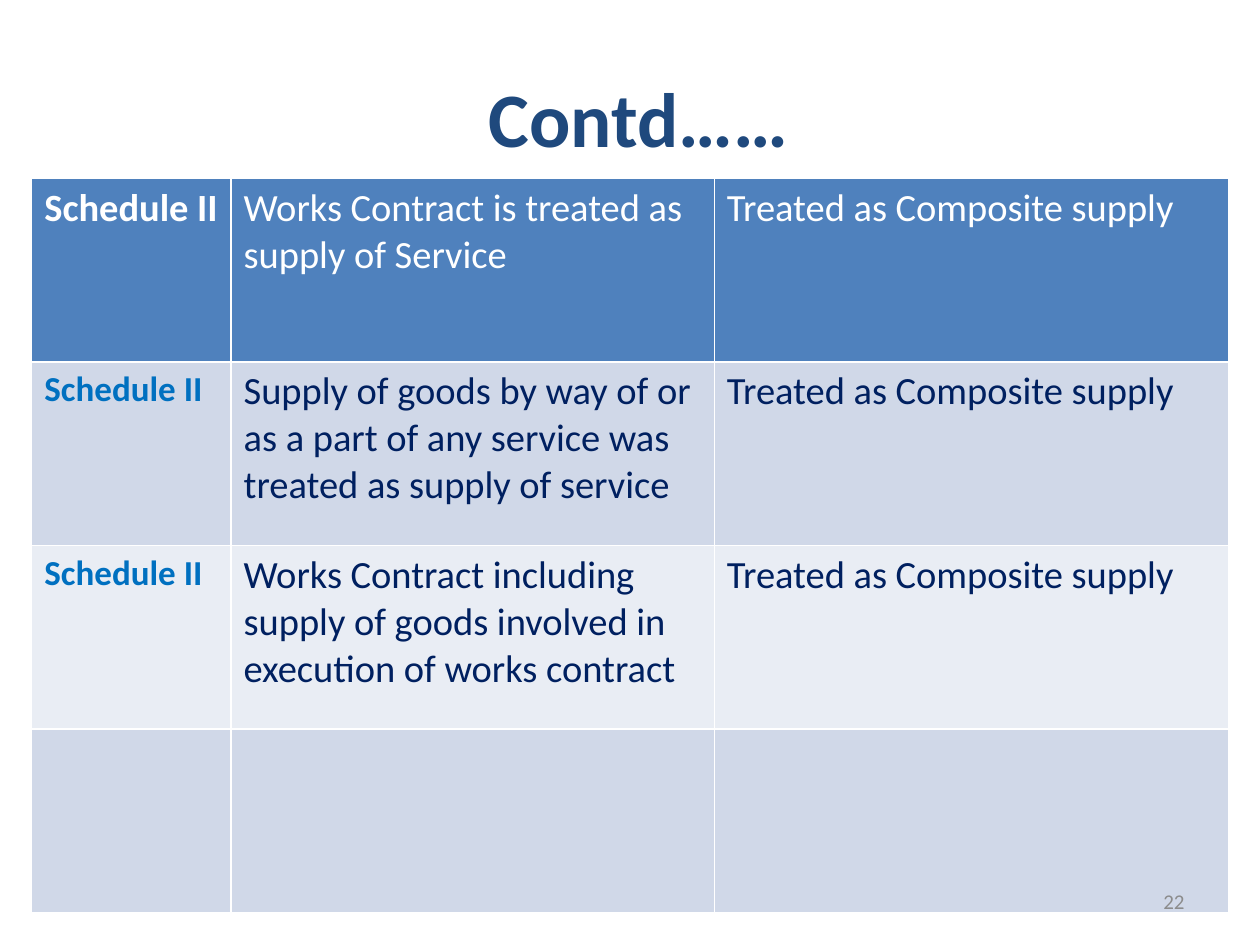
"""Build the schedule comparison slide with its title, table and page number."""
import pptx
import pptx.util
import pptx.dml.color
import pptx.enum.text

Cm, Pt = pptx.util.Cm, pptx.util.Pt
ALIGN = pptx.enum.text.PP_ALIGN
MIDDLE = pptx.enum.text.MSO_ANCHOR.MIDDLE

TITLE = " Contd……"
PAGE_NUMBER = "22"
SCHEDULE_ROWS = [
    ("Schedule II", "Works Contract is treated as supply of Service",
     "Treated as Composite supply"),
    ("Schedule II", "Supply of goods by way of or as a part of any service was "
     "treated as supply of service", "Treated as Composite supply"),
    ("Schedule II", "Works Contract including supply of goods involved in "
     "execution of works contract", "Treated as Composite supply"),
    ("", "", ""),
]
COLUMN_WIDTHS = [4.02, 9.74, 10.37]
ROW_HEIGHT = 3.7
COLORS = {
    "title": "1F497D", "header": "4F81BD", "header_text": "FFFFFF",
    "band_dark": "D0D8E8", "band_light": "E9EDF4",
    "schedule": "0070C0", "body": "002060", "number": "8C8C8C",
}


def rgb(key):
    return pptx.dml.color.RGBColor.from_string(COLORS[key])


def write(frame, text, size, color, bold=False, align=None):
    frame.text = text
    paragraph = frame.paragraphs[0]
    paragraph.alignment = align
    for run in paragraph.runs:
        run.font.name = "Calibri"
        run.font.size = Pt(size)
        run.font.bold = bold
        run.font.color.rgb = rgb(color)


def cell_style(row, column):
    if row == 0:
        return "header", "header_text", 22
    band = "band_dark" if row % 2 else "band_light"
    return (band, "schedule", 20) if column == 0 else (band, "body", 22)


def add_schedule_table(slide):
    schedule = slide.shapes.add_table(
        len(SCHEDULE_ROWS), len(COLUMN_WIDTHS), Cm(0.64), Cm(3.6),
        Cm(sum(COLUMN_WIDTHS)), Cm(ROW_HEIGHT * len(SCHEDULE_ROWS))).table
    for column, width in zip(schedule.columns, COLUMN_WIDTHS):
        column.width = Cm(width)
    for r, texts in enumerate(SCHEDULE_ROWS):
        schedule.rows[r].height = Cm(ROW_HEIGHT)
        for c, text in enumerate(texts):
            fill, color, size = cell_style(r, c)
            cell = schedule.cell(r, c)
            cell.fill.solid()
            cell.fill.fore_color.rgb = rgb(fill)
            write(cell.text_frame, text, size, color, bold=c == 0)


def main():
    deck = pptx.Presentation()
    deck.slide_width, deck.slide_height = Cm(25.4), Cm(19.05)
    slide = deck.slides.add_slide(deck.slide_layouts[5])

    title = slide.shapes.title
    title.left, title.top = Cm(1.27), Cm(0.76)
    title.width, title.height = Cm(22.86), Cm(3.18)
    title.text_frame.vertical_anchor = MIDDLE
    write(title.text_frame, TITLE, 44, "title", bold=True, align=ALIGN.CENTER)

    add_schedule_table(slide)

    number = slide.shapes.add_textbox(Cm(18.2), Cm(17.66), Cm(5.93), Cm(1.01))
    number.text_frame.word_wrap = True
    number.text_frame.vertical_anchor = MIDDLE
    write(number.text_frame, PAGE_NUMBER, 12, "number", align=ALIGN.RIGHT)

    deck.save("out.pptx")


if __name__ == "__main__":
    main()
